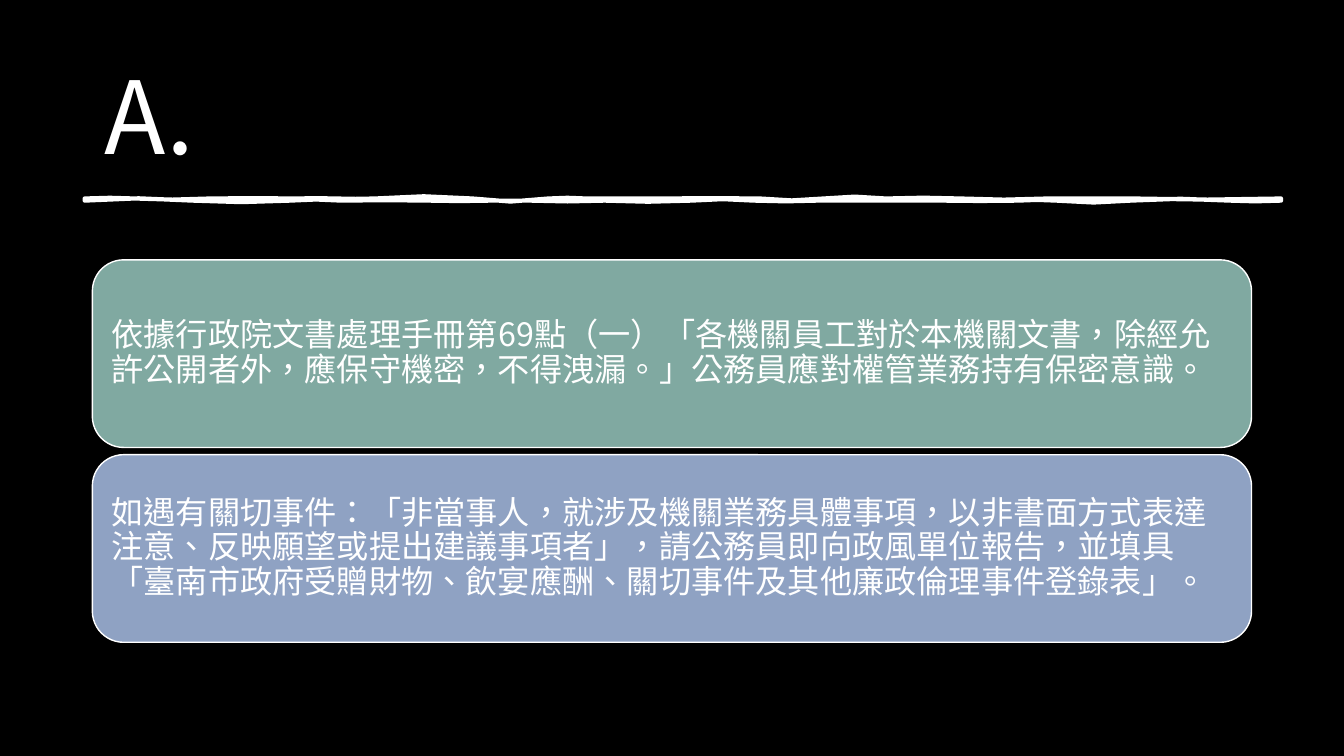
from pptx import Presentation
from pptx.dml.color import RGBColor
from pptx.enum.shapes import MSO_SHAPE
from pptx.enum.text import MSO_ANCHOR, PP_ALIGN
from pptx.oxml.ns import qn
from pptx.util import Pt

FONT = "Noto Sans CJK JP"
COLORS = {"black": "000000", "white": "FFFFFF", "green": "80A9A1", "blue": "8FA2C3"}
TITLE = "A."
CARDS = [
    ("green", "依據行政院文書處理手冊第69點（一）「各機關員工對於本機關文書，除經允許公開者外，"
              "應保守機密，不得洩漏。」公務員應對權管業務持有保密意識。"),
    ("blue", "如遇有關切事件：「非當事人，就涉及機關業務具體事項，以非書面方式表達注意、"
             "反映願望或提出建議事項者」，請公務員即向政風單位報告，並填具「臺南市政府受贈財物、"
             "飲宴應酬、關切事件及其他廉政倫理事件登錄表」。"),
]

SLIDE_W, SLIDE_H = 960, 540
LEFT, WIDTH = 66, 828
CARD_TOP, CARD_H, CARD_STEP = 185.6, 134, 139.2
CARD_PAD = 6.54

# Brush stroke: each wave is (end x, first bend, second bend), bends measured from the edge
STROKE_LEFT, STROKE_RIGHT = 60.5, 915.1
TOP_Y, BOTTOM_Y = 141.8, 143.3
TOP_WAVES = [
    (96.5, -1.4, 0), (149.8, 0.7, 1.4), (211.7, -1.4, 0.7), (239.8, -0.7, 0),
    (267.8, 0, 0.7), (337.7, -0.7, -3.6), (391.7, 3.6, 2.2), (419, -1.4, 0),
    (472.3, 0.7, -0.7), (542.9, 0.7, -1.4), (588.2, 1.4, 2.2), (632.9, -2.2, -1.4),
    (686.2, 1.4, -2.9), (748.1, 2.9, -0.7), (810, 0.7, -0.7), (STROKE_RIGHT, 1.4, 0.7),
]
BOTTOM_WAVES = [
    (878.4, 0.7, 0.7), (807.8, -0.7, -2.9), (754.6, 2.9, 0.7), (727.2, -0.7, -0.7),
    (673.2, 0.7, 0), (583.9, 0, 0), (538.6, 0, 1.4), (493.9, -1.4, -1.4),
    (432, 1.4, 0.7), (378.7, -0.7, 2.2), (350.6, -1.4, 1.4), (306, -1.4, 2.2),
    (244.1, -2.2, 1.4), (207.4, -1.4, -0.7), (137.5, 0.7, 2.2), (STROKE_LEFT, -2.2, -2.2),
]


def rgb(name):
    return RGBColor.from_string(COLORS[name])


def paint(sp, fill, line=None, width=1):
    sp.shadow.inherit = False
    sp.fill.solid()
    sp.fill.fore_color.rgb = rgb(fill)
    if line:
        sp.line.color.rgb = rgb(line)
        sp.line.width = Pt(width)
    else:
        sp.line.fill.background()


def add_text(shapes, box, text, size, inset=(7.2, 7.2, 7.2, 7.2),
             spacing=None, after=None, tracking=None):
    tf = shapes.add_textbox(*map(Pt, box)).text_frame
    tf.word_wrap = True
    tf.vertical_anchor = MSO_ANCHOR.MIDDLE
    tf.margin_left, tf.margin_top, tf.margin_right, tf.margin_bottom = map(Pt, inset)
    p = tf.paragraphs[0]
    p.alignment = PP_ALIGN.LEFT
    if spacing:
        p.line_spacing = spacing
    if after:
        p.space_after = Pt(after)
    r = p.add_run()
    r.text = text
    r.font.size = Pt(size)
    r.font.name = FONT
    r.font.color.rgb = rgb("white")
    rPr = r.font._element
    rPr.set("lang", "zh-TW")
    if tracking:
        rPr.set("spc", str(int(tracking * 100)))
    ea = rPr.makeelement(qn("a:ea"), {"typeface": FONT})
    rPr.find(qn("a:latin")).addnext(ea)


def wavy_edge(x, y, waves):
    """Middle and end point of each wave, the middle lying on the cubic curve."""
    points = []
    for end, bend1, bend2 in waves:
        points.append((Pt((x + end) / 2), Pt(y + 0.375 * (bend1 + bend2))))
        points.append((Pt(end), Pt(y)))
        x = end
    return points


def add_brush_stroke(shapes):
    outline = wavy_edge(STROKE_LEFT, TOP_Y, TOP_WAVES)
    outline.append((Pt(STROKE_RIGHT), Pt(BOTTOM_Y)))
    outline += wavy_edge(STROKE_RIGHT, BOTTOM_Y, BOTTOM_WAVES)
    builder = shapes.build_freeform(Pt(STROKE_LEFT), Pt(TOP_Y), scale=1.0)
    builder.add_line_segments(outline, close=True)
    paint(builder.convert_to_shape(), "white", "white", 3)


def main():
    prs = Presentation()
    prs.slide_width, prs.slide_height = Pt(SLIDE_W), Pt(SLIDE_H)
    s = prs.slides.add_slide(prs.slide_layouts[6])
    s.background.fill.solid()
    s.background.fill.fore_color.rgb = rgb("black")

    backdrop = s.shapes.add_shape(MSO_SHAPE.RECTANGLE, 0, 0, Pt(SLIDE_W), Pt(SLIDE_H))
    paint(backdrop, "black")
    add_text(s.shapes, (LEFT, 28.8, WIDTH, 104.4), TITLE, 72,
             inset=(8.64, 8.64, 8.64, 7.2), tracking=0.5)
    add_brush_stroke(s.shapes)

    for i, (color, text) in enumerate(CARDS):
        top = CARD_TOP + i * CARD_STEP
        card = s.shapes.add_shape(MSO_SHAPE.ROUNDED_RECTANGLE,
                                  Pt(LEFT), Pt(top), Pt(WIDTH), Pt(CARD_H))
        paint(card, color, "white")
        text_box = (LEFT + CARD_PAD, top + CARD_PAD,
                    WIDTH - 2 * CARD_PAD, CARD_H - 2 * CARD_PAD)
        add_text(s.shapes, text_box, text, 23, spacing=0.9, after=8.05)

    prs.save("out.pptx")


if __name__ == "__main__":
    main()
